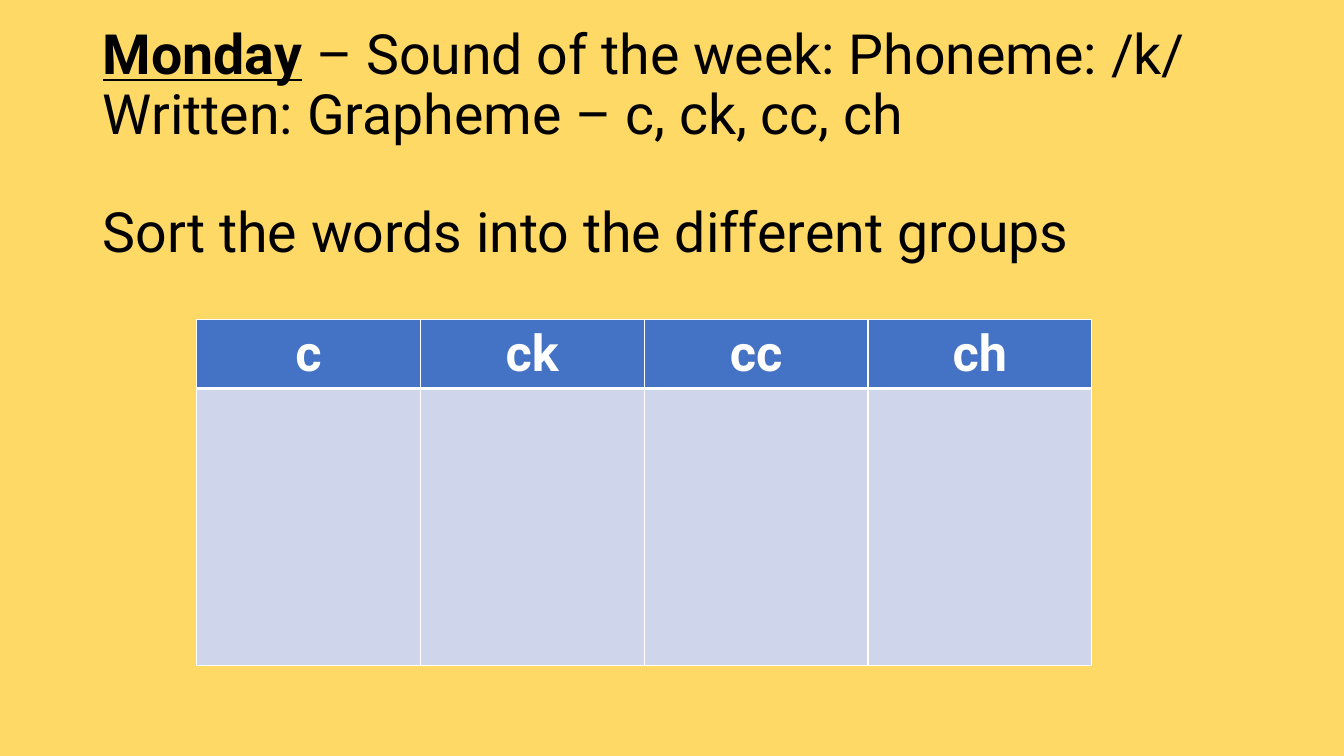
import pptx
import pptx.dml.color
import pptx.enum.text
import pptx.oxml
import pptx.oxml.ns
import pptx.util

Inches, Pt = pptx.util.Inches, pptx.util.Pt
FONT = "Roboto"
GRAPHEMES = ["c", "ck", "cc", "ch"]
COLUMN_WIDTH = 2.22
ROW_HEIGHTS = [0.68, 2.75]


def paint(color_format, hex_color):
    color_format.rgb = pptx.dml.color.RGBColor.from_string(hex_color)


def add_border(cell, side, points):
    cell.fill._xPr.append(pptx.oxml.parse_xml(
        f'<a:{side} {pptx.oxml.ns.nsdecls("a")} w="{Pt(points)}"><a:solidFill>'
        f'<a:srgbClr val="FFFFFF"/></a:solidFill></a:{side}>'))


presentation = pptx.Presentation()
presentation.slide_width = Inches(13.33)
presentation.slide_height = Inches(7.5)
slide = presentation.slides.add_slide(presentation.slide_layouts[5])

# Background
slide.background.fill.solid()
paint(slide.background.fill.fore_color, "FFD966")

# Title: the week's sound, then the task one line lower
title = slide.shapes.title
title.left, title.top = Inches(0.92), Inches(0.72)
title.width, title.height = Inches(11.5), Inches(1.45)
frame = title.text_frame
frame.word_wrap = True
frame.auto_size = pptx.enum.text.MSO_AUTO_SIZE.NONE
frame.vertical_anchor = pptx.enum.text.MSO_ANCHOR.MIDDLE
sound, task = frame.paragraphs[0], frame.add_paragraph()
day = sound.add_run()
day.text = "Monday"
day.font.bold = day.font.underline = True
sound.add_run().text = " – Sound of the week: Phoneme: /k/ Written: Grapheme – c, ck, cc, ch"
task.text = "Sort the words into the different groups"
task.space_before = Pt(42)
for paragraph in (sound, task):
    paragraph.alignment = pptx.enum.text.PP_ALIGN.LEFT
    paragraph.line_spacing = 0.9
    paragraph.font.name = FONT
    paragraph.font.size = Pt(39.6)
    paint(paragraph.font.color, "000000")

# Sorting table: one column per grapheme, with room for words below
table = slide.shapes.add_table(
    len(ROW_HEIGHTS), len(GRAPHEMES), Inches(1.95), Inches(3.17),
    Inches(COLUMN_WIDTH * len(GRAPHEMES)), Inches(sum(ROW_HEIGHTS))).table
for row, height in zip(table.rows, ROW_HEIGHTS):
    row.height = Inches(height)
for column, grapheme in enumerate(GRAPHEMES):
    table.columns[column].width = Inches(COLUMN_WIDTH)
    header, body = table.cell(0, column), table.cell(1, column)

    header.text = grapheme
    paragraph = header.text_frame.paragraphs[0]
    paragraph.alignment = pptx.enum.text.PP_ALIGN.CENTER
    paragraph.font.name = FONT
    paragraph.font.size = Pt(36)
    paragraph.font.bold = True
    paint(paragraph.font.color, "FFFFFF")

    # Borders come before the fill in a cell's XML
    for cell, top, bottom, fill in ((header, 1, 3, "4472C4"), (body, 3, 1, "CFD5EA")):
        for side, points in (("lnL", 1), ("lnR", 1), ("lnT", top), ("lnB", bottom)):
            add_border(cell, side, points)
        cell.fill.solid()
        paint(cell.fill.fore_color, fill)

presentation.save("out.pptx")
